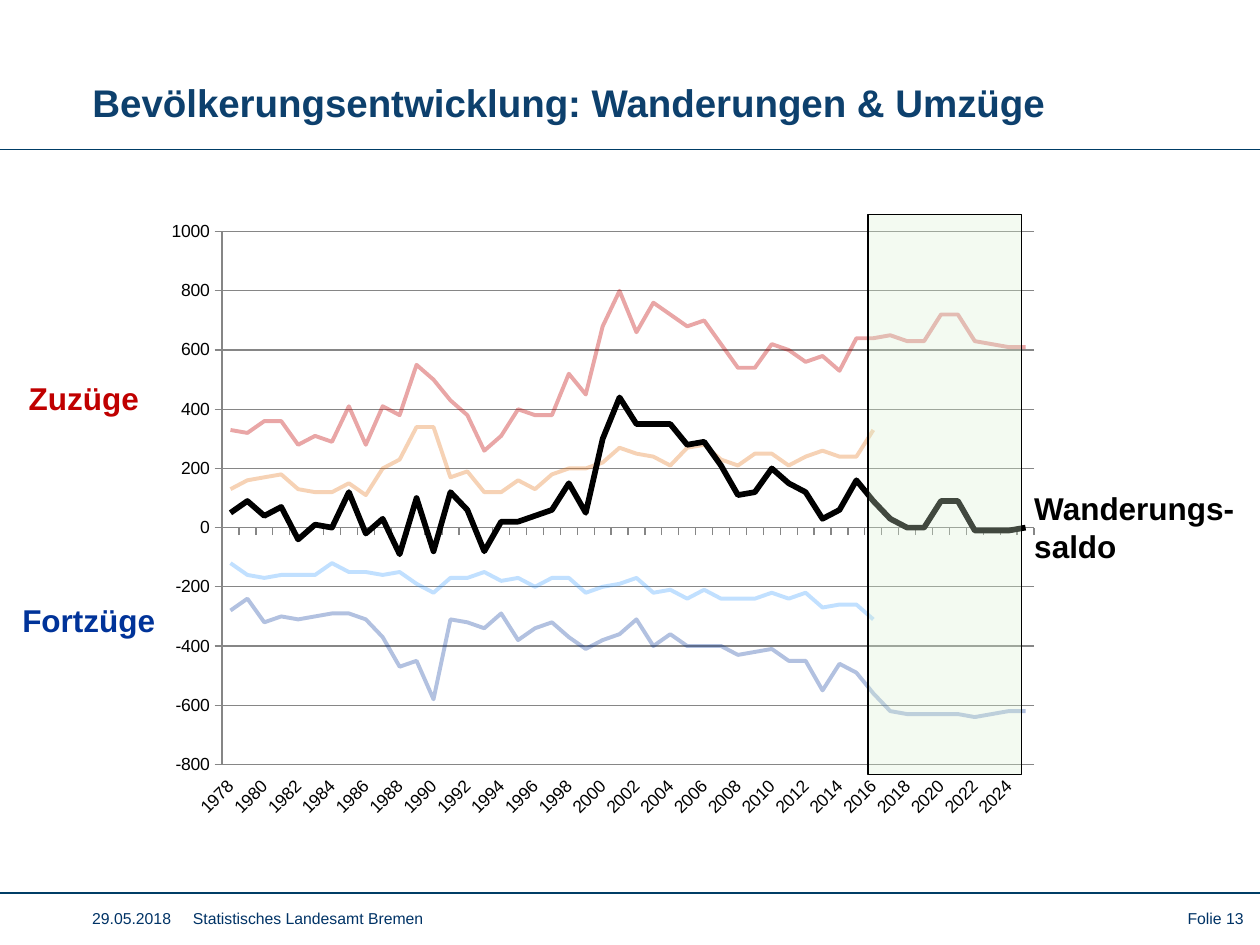
from lxml import etree
from pptx import Presentation
from pptx.chart.data import CategoryChartData
from pptx.dml.color import RGBColor
from pptx.enum.chart import XL_CHART_TYPE as ChartType, XL_TICK_LABEL_POSITION as LabelPos, XL_TICK_MARK as Tick
from pptx.enum.shapes import MSO_CONNECTOR as Connector, MSO_SHAPE as Shape
from pptx.enum.text import MSO_ANCHOR as Anchor, PP_ALIGN as Align
from pptx.oxml import parse_xml
from pptx.oxml.ns import nsdecls, qn
from pptx.util import Cm, Pt

FONT = "Arial"
COLORS = {"title": "0D406D", "rule": "003D66", "footer": "003366", "red": "C00000",
          "orange": "E36C0A", "navy": "003399", "sky": "3399FF", "black": "000000",
          "grid": "868686", "forecast": "D8F0D2"}
RGB = {name: RGBColor.from_string(value) for name, value in COLORS.items()}

FIRST_YEAR, LAST_YEAR = 1978, 2025
AXIS_MIN, AXIS_MAX, AXIS_STEP = -800, 1000, 200
LABEL_EVERY = 2     # years between two labels
LABEL_ANGLE = -45   # degrees

# One value a year from FIRST_YEAR on, ten years a row
ARRIVALS = [
    330, 320, 360, 360, 280, 310, 290, 410, 280, 410,
    380, 550, 500, 430, 380, 260, 310, 400, 380, 380,
    520, 450, 680, 800, 660, 760, 720, 680, 700, 620,
    540, 540, 620, 600, 560, 580, 530, 640, 640, 650,
    630, 630, 720, 720, 630, 620, 610, 610]
ARRIVALS_PART = [
    130, 160, 170, 180, 130, 120, 120, 150, 110, 200,
    230, 340, 340, 170, 190, 120, 120, 160, 130, 180,
    200, 200, 220, 270, 250, 240, 210, 270, 280, 230,
    210, 250, 250, 210, 240, 260, 240, 240, 330]
DEPARTURES = [
    -280, -240, -320, -300, -310, -300, -290, -290, -310, -370,
    -470, -450, -580, -310, -320, -340, -290, -380, -340, -320,
    -370, -410, -380, -360, -310, -400, -360, -400, -400, -400,
    -430, -420, -410, -450, -450, -550, -460, -490, -560, -620,
    -630, -630, -630, -630, -640, -630, -620, -620]
DEPARTURES_PART = [
    -120, -160, -170, -160, -160, -160, -120, -150, -150, -160,
    -150, -190, -220, -170, -170, -150, -180, -170, -200, -170,
    -170, -220, -200, -190, -170, -220, -210, -240, -210, -240,
    -240, -240, -220, -240, -220, -270, -260, -260, -310]
BALANCE = [
    50, 90, 40, 70, -40, 10, 0, 120, -20, 30,
    -90, 100, -80, 120, 60, -80, 20, 20, 40, 60,
    150, 50, 300, 440, 350, 350, 350, 280, 290, 210,
    110, 120, 200, 150, 120, 30, 60, 160, 90, 30,
    0, 0, 90, 90, -10, -10, -10, 0]

# values, colour, opacity in percent, line width in points
SERIES = [
    (ARRIVALS, "red", 35, 2.25),
    (ARRIVALS_PART, "orange", 30, 2.25),
    (DEPARTURES, "navy", 30, 2.25),
    (DEPARTURES_PART, "sky", 30, 2.25),
    (BALANCE, "black", 100, 3.25),
]


def set_opacity(element, percent):
    """Give every RGB colour inside the XML element this opacity."""
    for srgb in element.iter(qn("a:srgbClr")):
        etree.SubElement(srgb, qn("a:alpha")).set("val", str(percent * 1000))


def write(s, lines, size, color, bold=False, align=Align.LEFT):
    """Fill a shape with one paragraph per line, all in one format."""
    s.text_frame.text = "\n".join(lines)
    for p in s.text_frame.paragraphs:
        p.alignment = align
        p.font.name, p.font.size, p.font.bold = FONT, Pt(size), bold
        p.font.color.rgb = RGB[color]


prs = Presentation()
prs.slide_width, prs.slide_height = Cm(25.4), Cm(19.05)
slide = prs.slides.add_slide(prs.slide_layouts[5])
shapes = slide.shapes

# Title
title = shapes.title
title.left, title.top, title.width, title.height = Cm(1.61), Cm(1.13), Cm(20.1), Cm(1.85)
title.text_frame.vertical_anchor = Anchor.MIDDLE
write(title, ["Bevölkerungsentwicklung: Wanderungen & Umzüge"], 22, "title", bold=True)

# Rules below the title and above the footer
for y in (3.02, 18):
    rule = shapes.add_connector(Connector.STRAIGHT, 0, Cm(y), prs.slide_width, Cm(y))
    rule.line.color.rgb = RGB["rule"]
    rule.line.width = Pt(0.75)
    etree.SubElement(rule._element.spPr, qn("a:effectLst"))

# Footer: date and office parted by a tab stop, slide number on the right
for left, width, text, align in [
    (1.61, 15.4, "29.05.2018\tStatistisches Landesamt Bremen", Align.LEFT),
    (23.11, 2.21, "Folie 13", Align.RIGHT),
]:
    footer = shapes.add_textbox(Cm(left), Cm(18.19), Cm(width), Cm(0.7))
    footer.text_frame.word_wrap = True
    write(footer, [text], 9, "footer", align=align)
    if "\t" in text:
        p = footer.text_frame.paragraphs[0]
        p._p.get_or_add_pPr().insert(0, parse_xml(
            f'<a:tabLst {nsdecls("a")}><a:tab pos="{Cm(2.03)}" algn="l"/></a:tabLst>'))

# Chart
years = range(FIRST_YEAR, LAST_YEAR + 1)
data = CategoryChartData()
data.categories = [str(year) for year in years]
for number, (values, *_) in enumerate(SERIES, 1):
    missing = [None] * (len(years) - len(values))
    data.add_series(f"Series {number}", values + missing)

chart = shapes.add_chart(ChartType.LINE, Cm(3.1), Cm(4.22), Cm(18.11), Cm(12.52), data).chart
chart.has_legend = chart.has_title = False
chart.font.name, chart.font.size = FONT, Pt(10)
chart.font.color.rgb = RGB["black"]
plot = chart.plots[0]
plot.vary_by_categories = False
for series, (_, color, opacity, width) in zip(plot.series, SERIES):
    series.smooth = False
    series.format.line.width = Pt(width)
    series.format.line.color.rgb = RGB[color]
    if opacity < 100:
        set_opacity(series._element, opacity)

# Axes and gridlines
val, cat = chart.value_axis, chart.category_axis
val.minimum_scale, val.maximum_scale, val.major_unit = AXIS_MIN, AXIS_MAX, AXIS_STEP
val.has_major_gridlines = True
for part in (val, cat, val.major_gridlines):
    part.format.line.color.rgb = RGB["grid"]
    part.format.line.width = Pt(0.75)
for axis in (val, cat):
    axis.major_tick_mark, axis.minor_tick_mark = Tick.OUTSIDE, Tick.NONE
    axis.tick_labels.font.size = Pt(10)

# Year labels: below the plot, slanted, every second year, but a tick for each year
cat.tick_label_position = LabelPos.LOW
label_body = cat._element.find(qn("c:txPr")).find(qn("a:bodyPr"))
label_body.set("rot", str(LABEL_ANGLE * 60000))
last_setting = cat._element.find(qn("c:noMultiLvlLbl"))
for tag, step in (("tickLblSkip", LABEL_EVERY), ("tickMarkSkip", 1)):
    last_setting.addprevious(parse_xml(f'<c:{tag} {nsdecls("c")} val="{step}"/>'))

# Inner plot area, as fractions of the chart
plot_area = chart._chartSpace.chart.plotArea
for automatic in plot_area.findall(qn("c:layout")):
    plot_area.remove(automatic)
layout = parse_xml(f'<c:layout {nsdecls("c")}><c:manualLayout/></c:layout>')
for tag, value in [("layoutTarget", "inner"), ("xMode", "edge"), ("yMode", "edge"),
                   ("x", 0.076), ("y", 0.036), ("w", 0.904), ("h", 0.858)]:
    etree.SubElement(layout[0], qn(f"c:{tag}")).set("val", str(value))
plot_area.insert(0, layout)

# Labels beside the chart
for left, top, width, height, lines, color in [
    (0.33, 7.52, 2.77, 1.02, ["Zuzüge"], "red"),
    (0.2, 11.99, 3.23, 1.02, ["Fortzüge"], "navy"),
    (20.6, 9.73, 4.78, 1.8, ["Wanderungs-", "saldo"], "black"),
]:
    label = shapes.add_textbox(Cm(left), Cm(top), Cm(width), Cm(height))
    label.text_frame.word_wrap = False
    write(label, lines, 18, color, bold=True)

# Forecast years; the opacity comes before the line, which stays opaque
forecast = shapes.add_shape(Shape.RECTANGLE, Cm(17.5), Cm(4.32), Cm(3.1), Cm(11.3))
forecast.shadow.inherit = False
forecast.fill.solid()
forecast.fill.fore_color.rgb = RGB["forecast"]
set_opacity(forecast._element.spPr, 30)
forecast.line.color.rgb = RGB["black"]
forecast.line.width = Pt(0.75)

prs.save("out.pptx")
